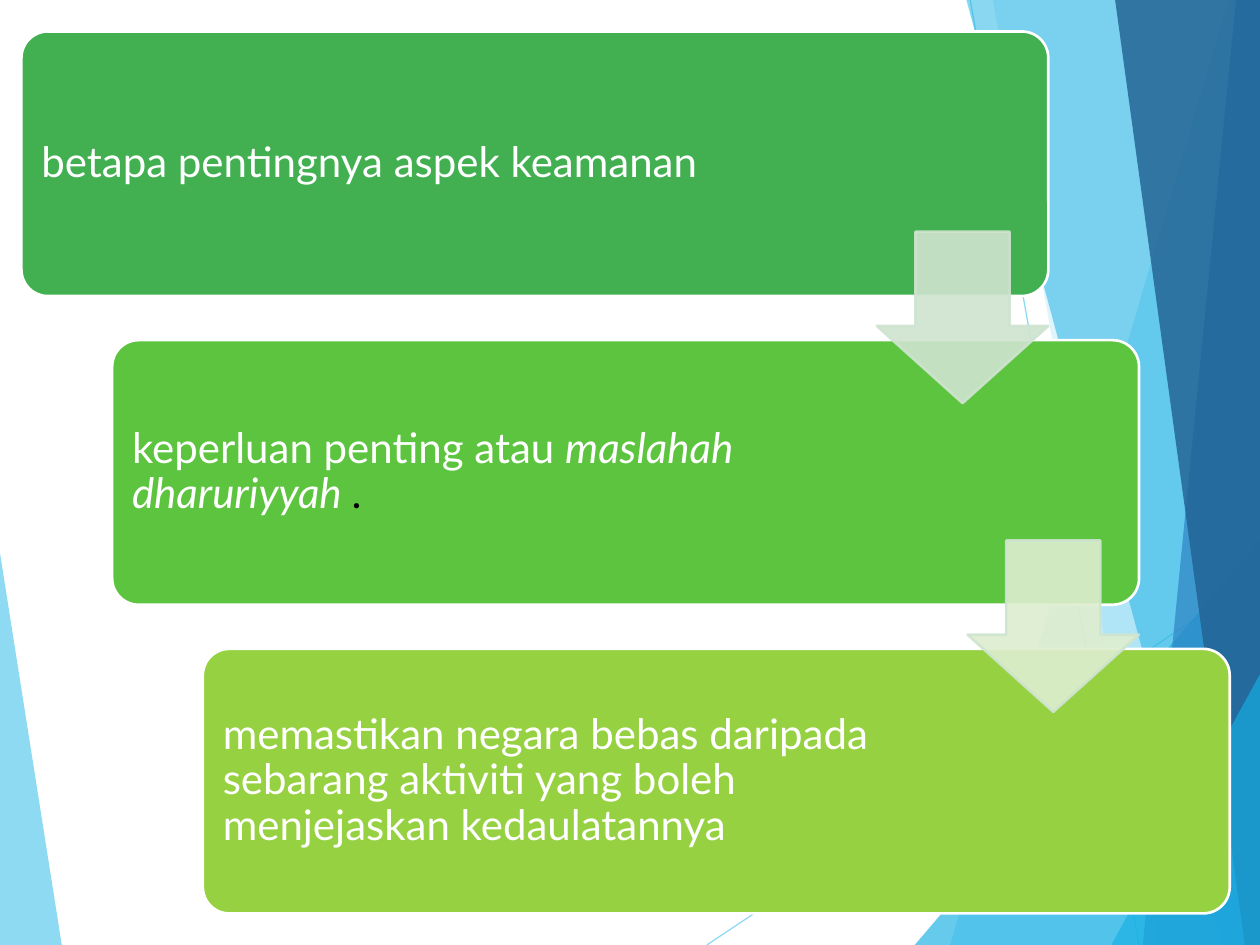
from lxml.etree import SubElement
from pptx import Presentation
from pptx.dml.color import RGBColor
from pptx.enum.shapes import MSO_CONNECTOR, MSO_SHAPE
from pptx.enum.text import MSO_ANCHOR
from pptx.oxml import parse_xml
from pptx.oxml.ns import qn
from pptx.util import Inches, Pt

WIDE, HIGH = 10, 7.5
HUES = {
    "sky": "5FCBEF", "cyan": "17B0E4", "blue": "2E83C3", "navy": "226292",
    "green": "42B051", "leaf": "5CC43E", "lime": "96D141",
    "mint": "CFE4D0", "pale": "DDEECF", "white": "FFFFFF", "black": "000000",
}
LEFT = ("sky", 70, [(0, 4.39), (0.49, HIGH), (0, HIGH)])
RAYS = [((5.61, HIGH), (WIDE, 4.57)), ((7.7, 0), (9.04, HIGH))]
FACETS = [
    ("sky", 36, [(9.75, 0), (7.54, HIGH), (WIDE, HIGH), (WIDE, 0)]),
    ("sky", 20, [(7.88, 0), (9.19, HIGH), (WIDE, HIGH), (WIDE, 0)]),
    ("cyan", 66, [(7.26, HIGH), (WIDE, 4.29), (WIDE, HIGH)]),
    ("cyan", 50, [(7.67, 0), (9.7, HIGH), (WIDE, HIGH), (WIDE, 0)]),
    ("blue", 70, [(9.81, 0), (9.07, HIGH), (WIDE, HIGH), (WIDE, 0)]),
    ("navy", 82, [(8.85, 0), (9.88, HIGH), (WIDE, HIGH), (WIDE, 0)]),
    ("cyan", 66, [(8.82, HIGH), (WIDE, 5.35), (WIDE, HIGH)]),
]
STEPS = [
    ("green", 5.88, [("betapa pentingnya aspek keamanan", "white", False)]),
    ("leaf", 5.94, [("keperluan penting atau ", "white", False),
                    ("maslahah dharuriyyah ", "white", True),
                    (".", "black", False)]),
    ("lime", 5.94, [("memastikan negara bebas daripada sebarang aktiviti "
                     "yang boleh menjejaskan kedaulatannya", "white", False)]),
]
ARROWS = ["mint", "pale"]
BOX_W, BOX_H = 8.15, 2.1
X, Y, DX, DY = 0.17, 0.25, 0.72, 2.45
PAD, TIP, DROP = 0.06, 1.36, 1.59
GLOW = ('<a:effectLst xmlns:a="http://schemas.openxmlformats.org/drawingml/2006/main">'
        '<a:outerShdw blurRad="38100" dist="38100" dir="2700000" algn="tl">'
        '<a:srgbClr val="000000"><a:alpha val="43000"/></a:srgbClr>'
        '</a:outerShdw></a:effectLst>')


def paint(fmt, hue, alpha=100):
    fmt.solid()
    fmt.fore_color.rgb = RGBColor.from_string(HUES[hue])
    if alpha < 100:
        clr = fmt._xPr.find(qn("a:solidFill"))[0]
        SubElement(clr, qn("a:alpha")).set("val", str(alpha * 1000))


def facet(shapes, hue, alpha, pts):
    pts = [(Inches(x), Inches(y)) for x, y in pts]
    pen = shapes.build_freeform(*pts[0])
    pen.add_line_segments(pts[1:], close=True)
    form = pen.convert_to_shape()
    form.shadow.inherit = False
    paint(form.fill, hue, alpha)
    form.line.fill.background()


def ray(shapes, start, end):
    line = shapes.add_connector(MSO_CONNECTOR.STRAIGHT,
                                *[Inches(v) for v in start + end])
    line.line.width = Pt(0.75)
    paint(line.line.fill, "sky", 70)
    SubElement(line._element.spPr, qn("a:effectLst"))


def solid(shapes, kind, box, adj, hue, edge, alpha=100):
    form = shapes.add_shape(kind, *[Inches(v) for v in box])
    for i, val in enumerate(adj):
        form.adjustments[i] = val
    form.shadow.inherit = False
    paint(form.fill, hue, alpha)
    form.line.width = Pt(1.5)
    paint(form.line.fill, edge, alpha)


def label(shapes, box, runs):
    frame = shapes.add_textbox(*[Inches(v) for v in box]).text_frame
    frame.word_wrap = True
    frame.vertical_anchor = MSO_ANCHOR.MIDDLE
    frame.margin_left = frame.margin_right = Inches(0.1)
    frame.margin_top = frame.margin_bottom = Inches(0.1)
    para = frame.paragraphs[0]
    para.line_spacing = 0.9
    para.font.size = Pt(24)
    para.font.name = "Lato"
    for text, hue, slant in runs:
        run = para.add_run()
        run.text = text
        run.font.italic = slant
        paint(run.font.fill, hue)
        run._r.get_or_add_rPr().append(parse_xml(GLOW))


def main():
    deck = Presentation()
    deck.slide_width, deck.slide_height = Inches(WIDE), Inches(HIGH)
    shapes = deck.slides.add_slide(deck.slide_layouts[6]).shapes
    facet(shapes, *LEFT)
    for start, end in RAYS:
        ray(shapes, start, end)
    for item in FACETS:
        facet(shapes, *item)
    for i, (hue, wide, runs) in enumerate(STEPS):
        x, y = X + i * DX, Y + i * DY
        solid(shapes, MSO_SHAPE.ROUNDED_RECTANGLE, (x, y, BOX_W, BOX_H),
              [0.1], hue, "white")
        label(shapes, (x + PAD, y + PAD, wide, BOX_H - 2 * PAD), runs)
    for i, hue in enumerate(ARROWS):
        x, y = X + i * DX + BOX_W - TIP, Y + i * DY + DROP
        solid(shapes, MSO_SHAPE.DOWN_ARROW, (x, y, TIP, TIP),
              [0.55, 0.45], hue, "mint", 90)
    deck.save("out.pptx")


if __name__ == "__main__":
    main()
